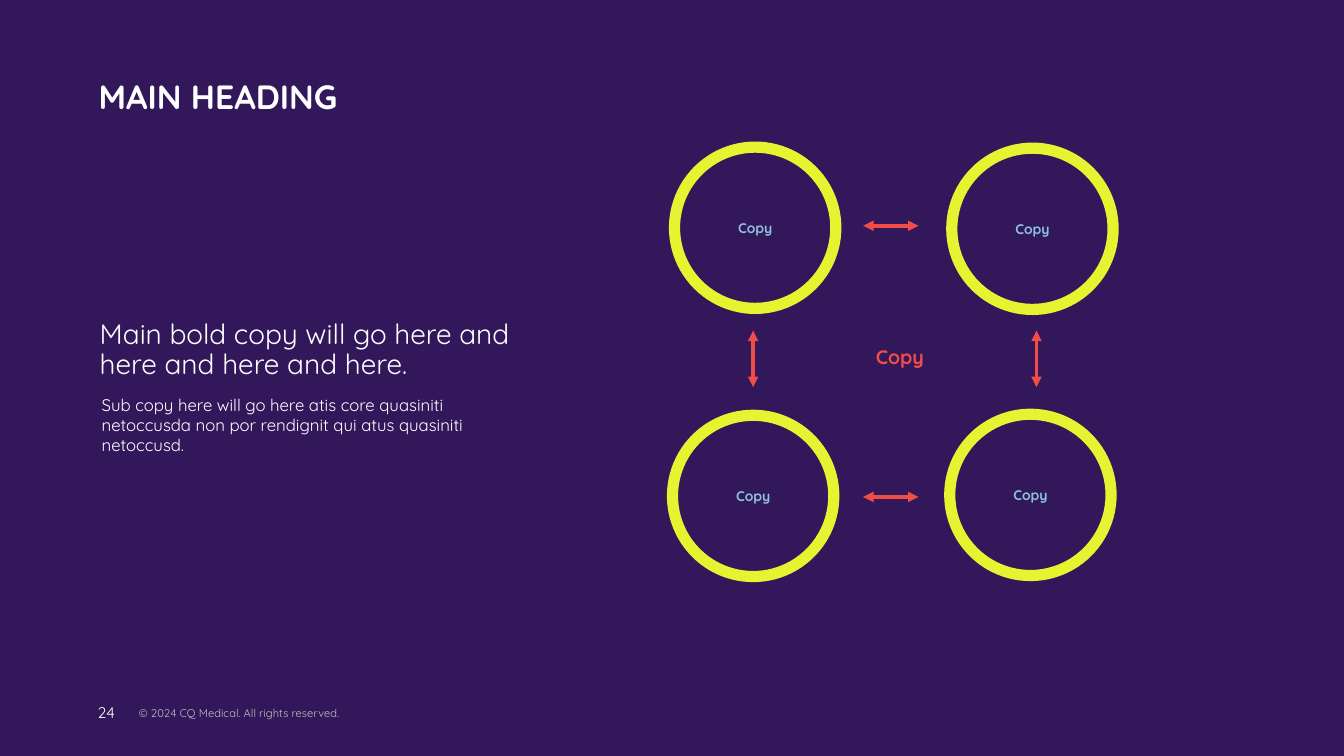
import pptx
import pptx.util
import pptx.dml.color
import pptx.enum.shapes
import pptx.enum.text
import pptx.oxml.ns
import lxml.etree

Inches = pptx.util.Inches
Pt = pptx.util.Pt
RGBColor = pptx.dml.color.RGBColor
ALIGN = pptx.enum.text.PP_ALIGN
ANCHOR = pptx.enum.text.MSO_ANCHOR

PURPLE = RGBColor(0x32, 0x18, 0x5B)
WHITE = RGBColor(0xFF, 0xFF, 0xFF)
GREY = RGBColor(0xBF, 0xBF, 0xBF)
CORAL = RGBColor(0xF0, 0x4D, 0x46)
LIME = RGBColor(0xE4, 0xF4, 0x31)
SKY = RGBColor(0x8D, 0xC1, 0xDB)


class Deck:
    font = "Quicksand"

    def __init__(self, show):
        self.slide = show.slides.add_slide(show.slide_layouts[6])
        fill = self.slide.background.fill
        fill.solid()
        fill.fore_color.rgb = PURPLE

    def label(self, shape, words, size, color, bold=False, lead=None):
        frame = shape.text_frame
        frame.word_wrap = True
        frame.text = words
        par = frame.paragraphs[0]
        if lead:
            par.line_spacing = lead
        for run in par.runs:
            run.font.name = self.font
            run.font.size = Pt(size)
            run.font.bold = bold
            run.font.color.rgb = color

    def center(self, shape, inset):
        frame = shape.text_frame
        frame.vertical_anchor = ANCHOR.MIDDLE
        frame.margin_left = frame.margin_right = Inches(inset)
        frame.margin_top = frame.margin_bottom = Inches(inset)
        frame.paragraphs[0].alignment = ALIGN.CENTER

    def text(self, box, words, size, color, **style):
        shape = self.slide.shapes.add_textbox(*map(Inches, box))
        self.label(shape, words, size, color, **style)
        return shape

    def ring(self, left, top, side, words):
        shape = self.slide.shapes.add_shape(
            pptx.enum.shapes.MSO_SHAPE.OVAL,
            Inches(left), Inches(top), Inches(side), Inches(side))
        shape.shadow.inherit = False
        shape.fill.background()
        shape.line.color.rgb = LIME
        shape.line.width = Pt(8)
        self.label(shape, words, 10, SKY, bold=True)
        self.center(shape, 0)

    def arrow(self, *ends):
        line = self.slide.shapes.add_connector(
            pptx.enum.shapes.MSO_CONNECTOR.STRAIGHT, *map(Inches, ends))
        line.line.color.rgb = CORAL
        line.line.width = Pt(2.5)
        qn = pptx.oxml.ns.qn
        props = line._element.spPr
        stroke = props.find(qn("a:ln"))
        for tag in ("a:headEnd", "a:tailEnd"):
            lxml.etree.SubElement(stroke, qn(tag), type="triangle")
        lxml.etree.SubElement(props, qn("a:effectLst"))


def main():
    show = pptx.Presentation()
    show.slide_width = Inches(13.33)
    show.slide_height = Inches(7.5)
    deck = Deck(show)

    # Footer
    deck.text((1.28, 6.96, 8.87, 0.57),
              "© 2024 CQ Medical. All rights reserved.", 8, GREY)
    deck.text((0.87, 6.93, 0.67, 0.4), "24", 11, WHITE)

    # Heading and copy
    deck.text((0.88, 0.7, 10.64, 1.27), "MAIN HEADING", 24, WHITE, bold=True)
    deck.text((0.89, 3.13, 4.45, 0.66),
              "Main bold copy will go here and here and here and here.",
              20, WHITE, lead=0.9)
    deck.text((0.91, 3.87, 4, 0.81),
              "Sub copy here will go here atis core quasiniti netoccusda "
              "non por rendignit qui atus quasiniti netoccusd.",
              12, WHITE, lead=Pt(14.3))

    # Label in the middle of the cycle
    hub = deck.text((7.97, 3.39, 1.91, 0.29), "Copy", 14, CORAL, bold=True)
    deck.center(hub, 0.03)

    # Rings
    for left, top in ((6.67, 4.12), (9.44, 1.47), (9.42, 4.11), (6.69, 1.46)):
        deck.ring(left, top, 1.6, "Copy")

    # Arrows between the rings
    for x in (7.47, 10.28):
        deck.arrow(x, 3.28, x, 3.84)
    for y in (2.24, 4.93):
        deck.arrow(8.56, y, 9.11, y)

    show.save("out.pptx")


if __name__ == "__main__":
    main()
